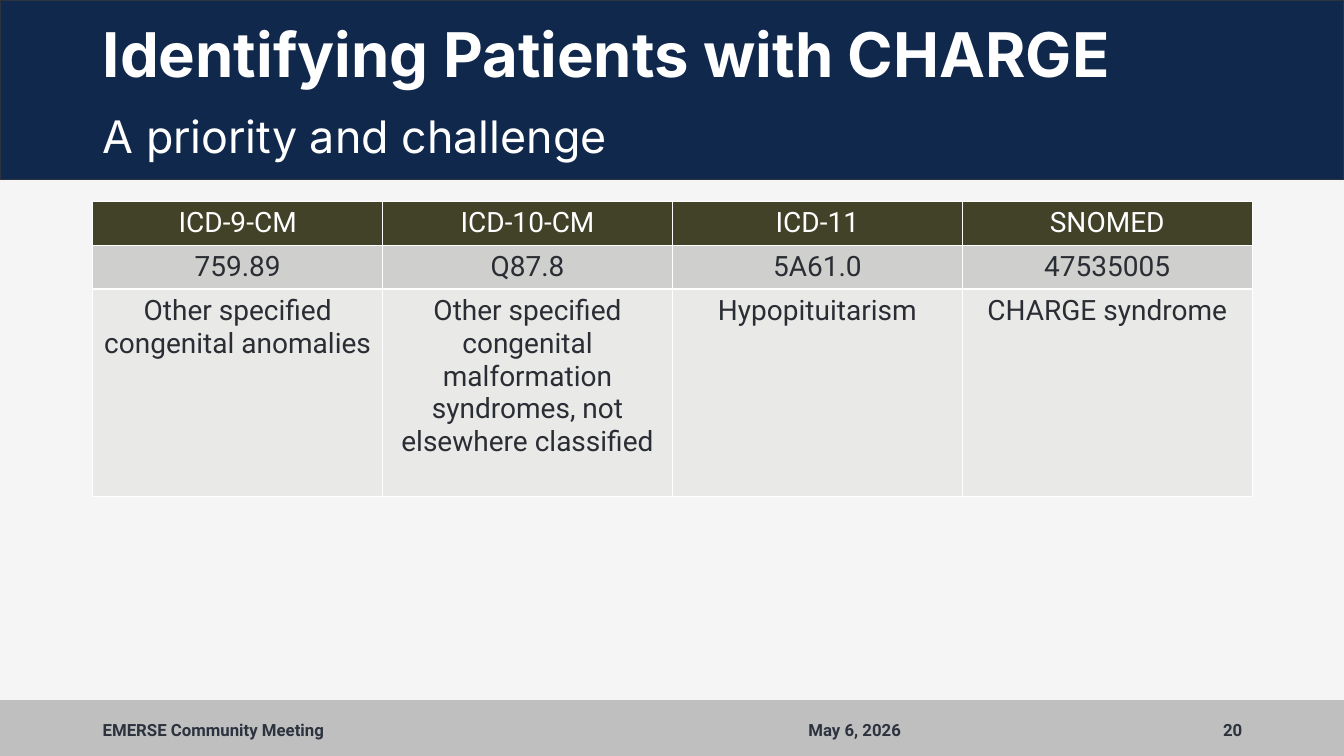
from lxml.etree import SubElement
from pptx import Presentation
from pptx.dml.color import RGBColor
from pptx.enum.shapes import MSO_SHAPE
from pptx.enum.text import MSO_ANCHOR as Anchor, PP_ALIGN as Align
from pptx.oxml.ns import qn
from pptx.util import Inches, Pt

# Content
TITLE = "Identifying Patients with CHARGE"
SUBTITLE = "A priority and challenge"
CODES = [
    ("ICD-9-CM", "ICD-10-CM", "ICD-11", "SNOMED"),
    ("759.89", "Q87.8", "5A61.0", "47535005"),
    ("Other specified congenital anomalies",
     "Other specified congenital malformation syndromes, not elsewhere classified",
     "Hypopituitarism", "CHARGE syndrome"),
]
ROW_STYLES = [  # height, fill, text colour
    (0.43, "414227", "FFFFFF"),
    (0.43, "CFCFCD", "2A2D33"),
    (2.06, "E9E9E8", "2A2D33"),
]
FOOTER = [  # text, left, width, alignment
    ("EMERSE Community Meeting", 0.92, 6.86, Align.LEFT),
    ("May 6, 2026", 7.92, 2.76, Align.LEFT),
    ("20", 10.82, 1.6, Align.RIGHT),
]

# Layout
WIDTH, HEIGHT = 13.33, 7.5
MARGIN, CONTENT_WIDTH = 0.92, 11.5
HEADER_HEIGHT, FOOTER_HEIGHT = 1.78, 0.55
TABLE_TOP = 2


def color(value):
    return RGBColor.from_string(value)


def write(text_frame, text, size, font, value, bold=False, align=Align.LEFT):
    text_frame.text = text
    paragraph = text_frame.paragraphs[0]
    paragraph.alignment = align
    run_font = paragraph.runs[0].font
    run_font.size, run_font.name, run_font.bold = Pt(size), font, bold
    run_font.color.rgb = color(value)
    return paragraph


def add_band(top, height, fill, line):
    band = slide.shapes.add_shape(
        MSO_SHAPE.RECTANGLE, 0, Inches(top), Inches(WIDTH), Inches(height))
    band.shadow.inherit = False
    band.fill.solid()
    band.fill.fore_color.rgb = color(fill)
    band.line.color.rgb = color(line)
    band.line.width = Pt(1)


def add_text(left, top, width, height, anchor):
    box = slide.shapes.add_textbox(*map(Inches, (left, top, width, height)))
    box.text_frame.word_wrap = True
    box.text_frame.vertical_anchor = anchor
    return box.text_frame


def set_borders(cell, value, points):
    properties = cell._tc.get_or_add_tcPr()
    for position, side in enumerate(("a:lnL", "a:lnR", "a:lnT", "a:lnB")):
        line = SubElement(properties, qn(side), w=str(Pt(points)))
        fill = SubElement(line, qn("a:solidFill"))
        SubElement(fill, qn("a:srgbClr"), val=value)
        properties.insert(position, line)


presentation = Presentation()
presentation.slide_width, presentation.slide_height = Inches(WIDTH), Inches(HEIGHT)
slide = presentation.slides.add_slide(presentation.slide_layouts[5])
slide.background.fill.solid()
slide.background.fill.fore_color.rgb = color("F5F5F5")

# Footer and header bands
add_band(HEIGHT - FOOTER_HEIGHT, FOOTER_HEIGHT, "BFBFBF", "BFBFBF")
add_band(0, HEADER_HEIGHT, "10284B", "2C333F")

# Footer text
for text, left, width, align in FOOTER:
    frame = add_text(left, 7.04, width, 0.4, Anchor.MIDDLE)
    write(frame, text, 12, "Roboto", "2C333F", True, align)

# Code table
table = slide.shapes.add_table(
    len(CODES), len(CODES[0]), Inches(MARGIN), Inches(TABLE_TOP),
    Inches(CONTENT_WIDTH), Inches(sum(style[0] for style in ROW_STYLES))).table
for row, texts, (height, fill, text_color) in zip(table.rows, CODES, ROW_STYLES):
    row.height = Inches(height)
    for cell, text in zip(row.cells, texts):
        cell.fill.solid()
        cell.fill.fore_color.rgb = color(fill)
        set_borders(cell, "FFFFFF", 1)
        write(cell.text_frame, text, 20, "Roboto", text_color, align=Align.CENTER)

# Subtitle
frame = add_text(MARGIN, 1.09, CONTENT_WIDTH, 0.63, Anchor.TOP)
write(frame, SUBTITLE, 32, "Inter", "FFFFFF").line_spacing = 0.9

# Title, brought in front of the header band
title = slide.shapes.title
title.left, title.top, title.width, title.height = map(
    Inches, (MARGIN, 0.15, CONTENT_WIDTH, 0.85))
title.text_frame.vertical_anchor = Anchor.MIDDLE
write(title.text_frame, TITLE, 44, "Inter", "FFFFFF", True).line_spacing = 0.9
slide.shapes.element.append(title.element)

presentation.save("out.pptx")
